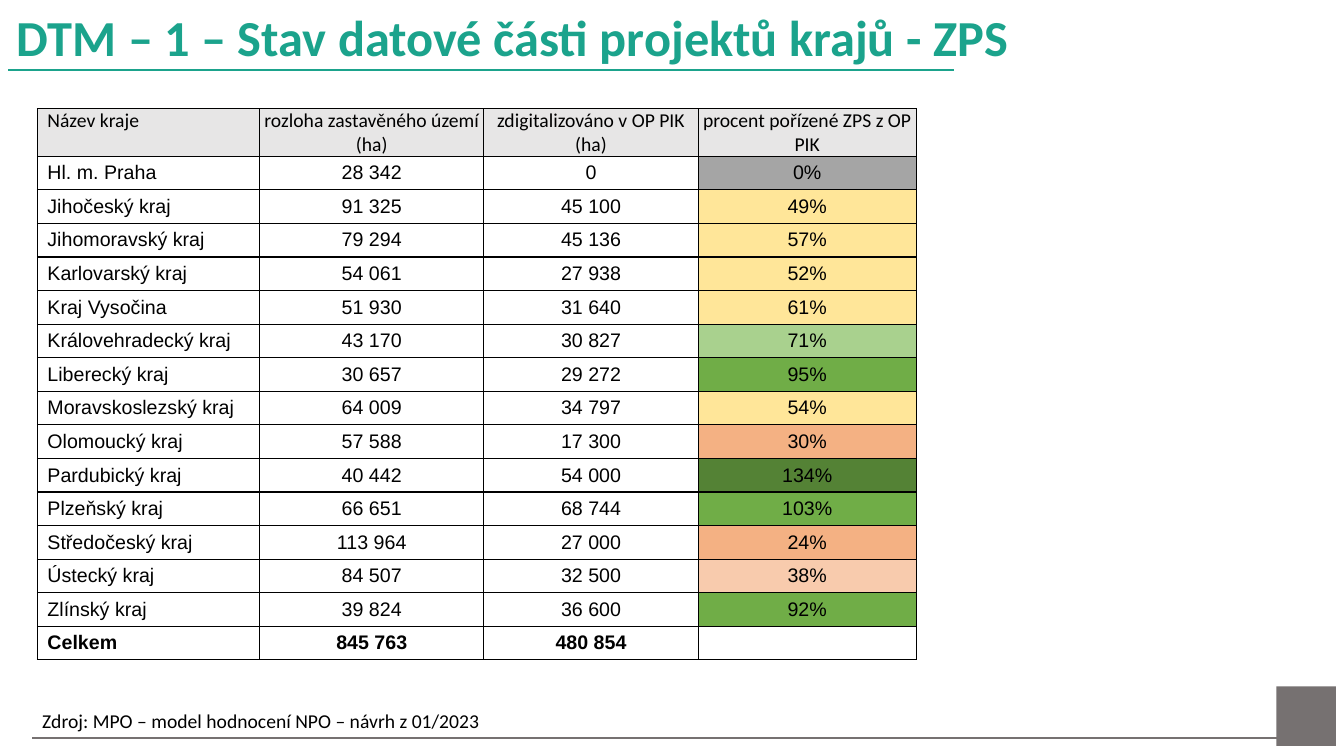
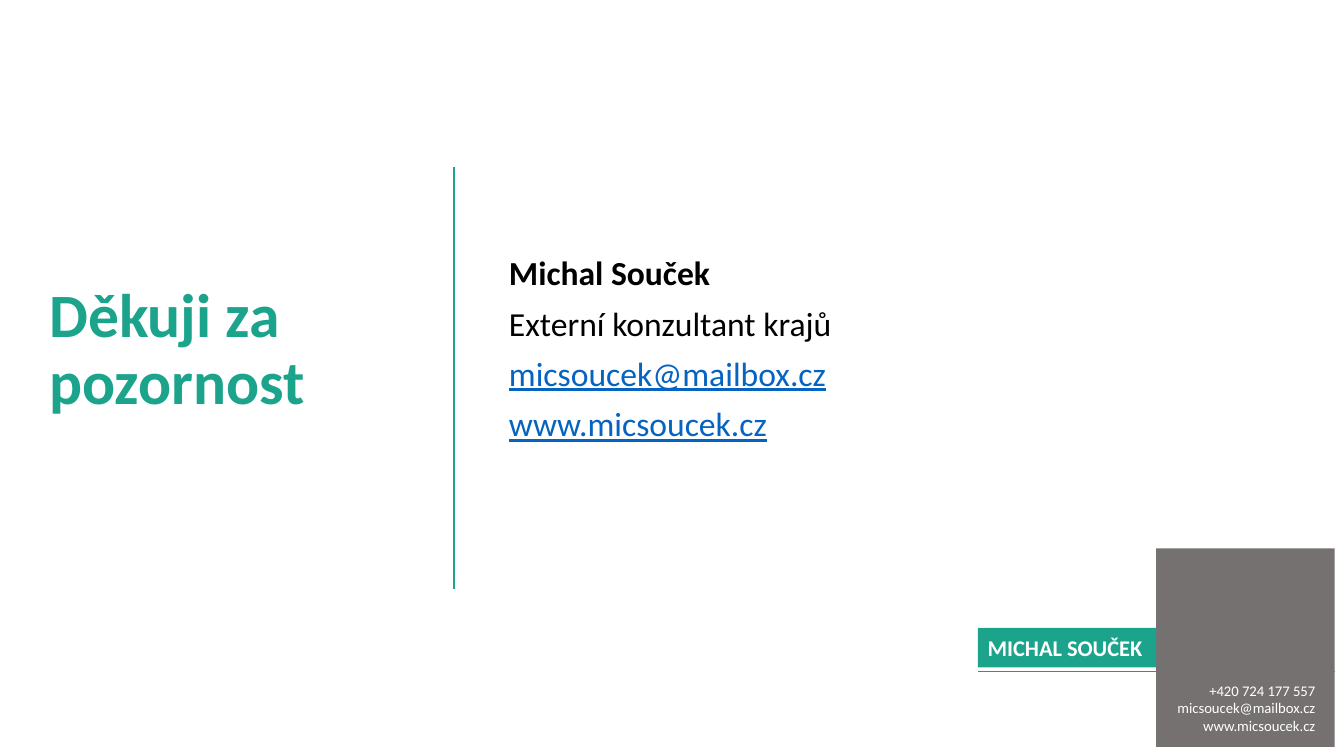
from dataclasses import dataclass

from lxml.etree import SubElement
from pptx import Presentation
from pptx.dml.color import RGBColor
from pptx.enum.shapes import MSO_CONNECTOR, MSO_SHAPE
from pptx.enum.text import MSO_ANCHOR, PP_ALIGN
from pptx.oxml.ns import qn
from pptx.util import Inches, Pt

TEAL = RGBColor(0x1B, 0xA3, 0x8C)
GRAY = RGBColor(0x76, 0x71, 0x71)
BLACK = RGBColor(0, 0, 0)
WHITE = RGBColor(0xFF, 0xFF, 0xFF)
LINK_BLUE = RGBColor(0x05, 0x63, 0xC1)
HEADER_GRAY = RGBColor(0xE7, 0xE6, 0xE6)
DARK_GREEN = RGBColor(0x54, 0x82, 0x35)
PERCENT_BANDS = [
    (0, RGBColor(0xA5, 0xA5, 0xA5)),
    (30, RGBColor(0xF4, 0xB1, 0x83)),
    (40, RGBColor(0xF8, 0xCB, 0xAD)),
    (65, RGBColor(0xFF, 0xE6, 0x99)),
    (80, RGBColor(0xA9, 0xD1, 0x8E)),
    (110, RGBColor(0x70, 0xAD, 0x47)),
]

EMAIL = "micsoucek@mailbox.cz"
WEBSITE = "www.micsoucek.cz"
TABLE_HEADER = [
    "Název kraje",
    "rozloha zastavěného území (ha)",
    "zdigitalizováno v OP PIK (ha)",
    "procent pořízené ZPS z OP PIK",
]
REGIONS = [
    ("Hl. m. Praha", 28342, 0),
    ("Jihočeský kraj", 91325, 45100),
    ("Jihomoravský kraj", 79294, 45136),
    ("Karlovarský kraj", 54061, 27938),
    ("Kraj Vysočina", 51930, 31640),
    ("Královehradecký kraj", 43170, 30827),
    ("Liberecký kraj", 30657, 29272),
    ("Moravskoslezský kraj", 64009, 34797),
    ("Olomoucký kraj", 57588, 17300),
    ("Pardubický kraj", 40442, 54000),
    ("Plzeňský kraj", 66651, 68744),
    ("Středočeský kraj", 113964, 27000),
    ("Ústecký kraj", 84507, 32500),
    ("Zlínský kraj", 39824, 36600),
]
TOTAL = ("Celkem", 845763, 480854)
COLUMN_SHARES = [25.3, 25.5, 24.4, 24.8]
HEADER_SHARE = 8.6


@dataclass
class Box:
    """A rectangle whose sections are given as percentages of its size."""

    left: int
    top: int
    width: int
    height: int

    def section(self, left, top, width, height):
        """Return the box that covers the given percentages of this one."""
        return Box(
            round(self.left + self.width * left / 100),
            round(self.top + self.height * top / 100),
            round(self.width * width / 100),
            round(self.height * height / 100),
        )

    def frame(self):
        """Return the position and size as add_shape expects them."""
        return self.left, self.top, self.width, self.height


def write(text_frame, text, size=14, color=BLACK, bold=False, font="Calibri", underline=False,
          align=PP_ALIGN.LEFT, line_spacing=None, space_before=None, more=False):
    """Write one formatted paragraph, after the existing ones if more is set."""
    paragraph = text_frame.add_paragraph() if more else text_frame.paragraphs[0]
    paragraph.alignment = align
    paragraph.line_spacing = line_spacing
    if space_before is not None:
        paragraph.space_before = Pt(space_before)
    run = paragraph.add_run()
    run.text = text
    run.font.size = Pt(size)
    run.font.name = font
    run.font.bold = bold
    run.font.underline = underline
    run.font.color.rgb = color
    return paragraph


def add_text_frame(shapes, box, anchor=MSO_ANCHOR.TOP, wrap=True):
    """Add an empty text box and return its text frame."""
    text_frame = shapes.add_textbox(*box.frame()).text_frame
    text_frame.word_wrap = wrap
    text_frame.vertical_anchor = anchor
    return text_frame


def add_block(shapes, box, color):
    """Add a plain filled rectangle."""
    block = shapes.add_shape(MSO_SHAPE.RECTANGLE, *box.frame())
    block.shadow.inherit = False
    block.fill.solid()
    block.fill.fore_color.rgb = color
    block.line.fill.background()
    return block


def add_rule(shapes, box, color=TEAL, width=1.5):
    """Add a straight line from the first to the last corner of a box."""
    rule = shapes.add_connector(MSO_CONNECTOR.STRAIGHT, box.left, box.top,
                                box.left + box.width, box.top + box.height)
    rule.line.color.rgb = color
    rule.line.width = Pt(width)
    SubElement(rule._element.spPr, qn("a:effectLst"))


def add_title(shapes, box, text, size):
    """Add a title in the shared style."""
    text_frame = add_text_frame(shapes, box, MSO_ANCHOR.MIDDLE)
    write(text_frame, text, size=size, color=TEAL, bold=True, line_spacing=0.9)


def add_heading(slide, box, text):
    """Add an underlined slide heading."""
    add_title(slide.shapes, box, text, 36)
    add_rule(slide.shapes, box.section(0.1, 98.4, 71.2, 0))


def add_footer(slide, box, source):
    """Add the source note, its rule and the corner square."""
    add_block(slide.shapes, box.section(95.44, 0, 4.56, 100), GRAY)
    add_rule(slide.shapes, box.section(0, 86.4, 100, 0), GRAY, 1)
    write(add_text_frame(slide.shapes, box.section(0, 28.8, 35.3, 57.6), wrap=False), source)


def percent_color(percent):
    """Return the fill of the band that a percentage falls in."""
    return next((color for limit, color in PERCENT_BANDS if percent <= limit), DARK_GREEN)


def thousands(number):
    """Format a whole number with spaces between thousands."""
    return f"{number:,}".replace(",", " ")


def add_borders(cell):
    """Draw a thin black border on all four sides of a cell."""
    properties = cell._tc.get_or_add_tcPr()
    for side in ("lnL", "lnR", "lnT", "lnB"):
        line = SubElement(properties, qn(f"a:{side}"), w=str(Pt(1)))
        fill = SubElement(line, qn("a:solidFill"))
        SubElement(fill, qn("a:srgbClr"), val=str(BLACK))


def fill_cell(cell, text, first_column, fill=None, **text_format):
    """Format one table cell and write its text."""
    cell.margin_left = cell.margin_right = cell.margin_top = cell.margin_bottom = 0
    cell.vertical_anchor = MSO_ANCHOR.MIDDLE
    add_borders(cell)
    if fill is None:
        cell.fill.background()
    else:
        cell.fill.solid()
        cell.fill.fore_color.rgb = fill
    if text:
        align = PP_ALIGN.LEFT if first_column else PP_ALIGN.CENTER
        paragraph = write(cell.text_frame, text, align=align, **text_format)
        if first_column:
            paragraph._p.get_or_add_pPr().set("marL", str(Inches(0.1)))


def add_region_table(slide, box):
    """Add the table of regions with percentages coloured by band."""
    body = []
    for name, area, digitized in REGIONS:
        percent = round(100 * digitized / area)
        body.append(([name, thousands(area), thousands(digitized), f"{percent}%"],
                     percent_color(percent), {"font": "Arial"}))
    name, area, digitized = TOTAL
    body.append(([name, thousands(area), thousands(digitized), ""], None,
                 {"font": "Arial", "bold": True}))
    table = slide.shapes.add_table(len(body) + 1, len(TABLE_HEADER), *box.frame()).table
    table.first_row = table.horz_banding = False
    for column, share in zip(table.columns, COLUMN_SHARES):
        column.width = round(box.width * share / 100)
    row_share = (100 - HEADER_SHARE) / len(body)
    for index, row in enumerate(table.rows):
        row.height = round(box.height * (row_share if index else HEADER_SHARE) / 100)
    for column, text in enumerate(TABLE_HEADER):
        fill_cell(table.cell(0, column), text, column == 0, HEADER_GRAY)
    table.cell(0, 0).vertical_anchor = MSO_ANCHOR.TOP
    for row, (texts, fill, text_format) in enumerate(body, 1):
        for column, text in enumerate(texts):
            fill_cell(table.cell(row, column), text, column == 0,
                      fill if column == 3 else None, **text_format)


def add_contacts(slide, box):
    """Add the speaker's name, role and addresses."""
    text_frame = add_text_frame(slide.shapes, box)
    link = {"color": LINK_BLUE, "underline": True}
    lines = [("Michal Souček", {"bold": True}), ("Externí konzultant krajů", {}),
             (EMAIL, link), (WEBSITE, link)]
    for index, (text, text_format) in enumerate(lines):
        write(text_frame, text, size=24, line_spacing=0.9, space_before=10,
              more=index > 0, **text_format)


def add_business_card(slide, box):
    """Add the grouped card with name tag and contact details."""
    shapes = slide.shapes.add_group_shape().shapes
    add_block(shapes, box.section(50, 0, 50, 100), GRAY)
    tag = add_block(shapes, box.section(0, 40.1, 50, 19.8), TEAL)
    tag.text_frame.word_wrap = False
    tag.text_frame.vertical_anchor = MSO_ANCHOR.MIDDLE
    write(tag.text_frame, "MICHAL SOUČEK", size=16, color=WHITE, bold=True)
    details = add_text_frame(shapes, box.section(52.8, 64.5, 44.6, 32), wrap=False)
    for index, text in enumerate(["+420 724 177 557", EMAIL, WEBSITE]):
        write(details, text, size=10.5, color=WHITE, align=PP_ALIGN.RIGHT, more=index > 0)
    add_rule(shapes, box.section(0, 61.9, 100, 0), GRAY, 1)


def build_table_slide(slide, page):
    """Build the slide on the state of the regional projects."""
    add_heading(slide, page.section(0.5, 1.1, 98.9, 8.3),
                "DTM – 1 – Stav datové části projektů krajů - ZPS")
    add_region_table(slide, page.section(2.78, 14.4, 65.4, 72.93))
    add_footer(slide, page.section(2.4, 90.8, 97, 7.87),
               "Zdroj: MPO – model hodnocení NPO – návrh z 01/2023")


def build_closing_slide(slide, page):
    """Build the closing slide with thanks and contacts."""
    add_title(slide.shapes, page.section(2.93, 36.8, 29.8, 19.33), "Děkuji za pozornost", 44)
    add_rule(slide.shapes, page.section(33.75, 22.13, 0, 55.74))
    add_business_card(slide, page.section(72.75, 72.53, 26.55, 26.27))
    add_contacts(slide, page.section(37.13, 33.33, 58.35, 26.27))


def main():
    """Build and save the presentation."""
    presentation = Presentation()
    presentation.slide_width = Inches(13.33)
    presentation.slide_height = Inches(7.5)
    page = Box(0, 0, presentation.slide_width, presentation.slide_height)
    for build in (build_table_slide, build_closing_slide):
        build(presentation.slides.add_slide(presentation.slide_layouts[6]), page)
    presentation.save("out.pptx")


if __name__ == "__main__":
    main()
